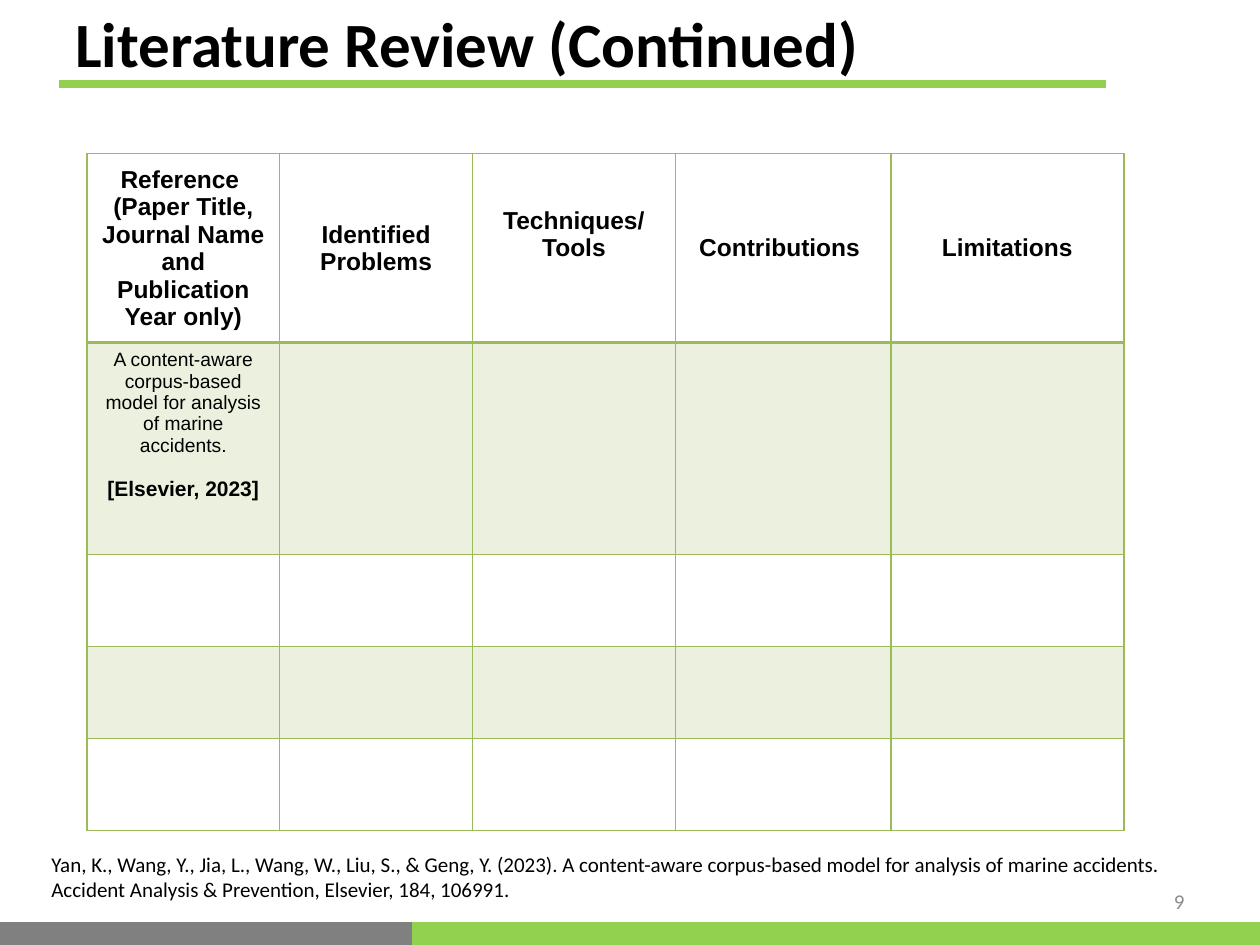
from lxml.etree import SubElement as Sub
from pptx import Presentation
from pptx.dml.color import RGBColor as RGB
from pptx.enum.shapes import MSO_CONNECTOR as Link
from pptx.enum.text import MSO_ANCHOR as Anchor, PP_ALIGN as Align
from pptx.oxml.ns import qn
from pptx.util import Inches, Pt

COLORS = {
    "lime": "92D050",
    "gray": "808080",
    "pale": "8C8C8C",
    "black": "000000",
    "edge": "9BBB59",
    "band": "EBF1DE",
}
HEADS = [
    ["Reference ", "(Paper Title, Journal Name and Publication Year only)"],
    ["Identified Problems"],
    ["Techniques/", "Tools"],
    ["Contributions "],
    ["Limitations"],
]
PAPER = "A content-aware corpus-based model for analysis of marine accidents."
CITE = (
    "Yan, K., Wang, Y., Jia, L., Wang, W., Liu, S., & Geng, Y. (2023). "
    "A content-aware corpus-based model for analysis of marine accidents. "
    "Accident Analysis & Prevention, Elsevier, 184, 106991."
)
WIDTHS = [1.53, 1.53, 1.61, 1.71, 1.85]
HEIGHTS = [1.41, 1.68, 0.73, 0.73, 0.73]


def write(frame, text, font="Calibri", size=12, color="black", bold=False,
          align=Align.LEFT, before=0):
    """Add one formatted paragraph, filling the first one if it is empty."""
    para = frame.paragraphs[0]
    if para.runs:
        para = frame.add_paragraph()
    para.alignment = align
    if before:
        para.space_before = Pt(before)
    run = para.add_run()
    run.text = text
    run.font.name = font
    run.font.size = Pt(size)
    run.font.bold = bold
    run.font.color.rgb = RGB.from_string(COLORS[color])


class Deck:
    """Hold the style and the current slide."""

    def __init__(self):
        """Open a blank slide."""
        self.show = Presentation()
        self.show.slide_width = Inches(10)
        self.show.slide_height = Inches(7.5)
        self.slide = self.show.slides.add_slide(self.show.slide_layouts[6])

    def bar(self, left, right, y, color, width):
        """Draw a thick level line with square ends."""
        line = self.slide.shapes.add_connector(
            Link.STRAIGHT, Inches(left), Inches(y), Inches(right), Inches(y))
        line.line.color.rgb = RGB.from_string(COLORS[color])
        line.line.width = Pt(width)
        line.line._get_or_add_ln().set("cap", "sq")
        Sub(line._element.spPr, qn("a:effectLst"))

    def label(self, box, text, anchor=Anchor.TOP, **style):
        """Place a wrapped text box."""
        frame = self.slide.shapes.add_textbox(*map(Inches, box)).text_frame
        frame.word_wrap = True
        frame.vertical_anchor = anchor
        write(frame, text, **style)

    def border(self, cell, top, bottom):
        """Edge a cell on all four sides."""
        props = cell._tc.get_or_add_tcPr()
        for side, width in zip("LRTB", (1, 1, top, bottom)):
            line = Sub(props, qn(f"a:ln{side}"), w=str(Pt(width)))
            fill = Sub(line, qn("a:solidFill"))
            Sub(fill, qn("a:srgbClr"), val=COLORS["edge"])

    def grid(self, left, top, widths, heights):
        """Add a banded table and return it."""
        table = self.slide.shapes.add_table(
            len(heights), len(widths), Inches(left), Inches(top),
            Inches(sum(widths)), Inches(sum(heights))).table
        table.first_row = table.horz_banding = False
        for col, width in zip(table.columns, widths):
            col.width = Inches(width)
        for i, height in enumerate(heights):
            table.rows[i].height = Inches(height)
            for cell in table.rows[i].cells:
                self.border(cell, 2 if i == 1 else 1, 2 if i == 0 else 1)
                if i % 2:
                    cell.fill.solid()
                    cell.fill.fore_color.rgb = RGB.from_string(COLORS["band"])
                else:
                    cell.fill.background()
        return table


def main():
    """Build and save the slide."""
    deck = Deck()
    deck.bar(0.08, 9.92, 7.42, "lime", 14.5)
    deck.bar(0.5, 8.75, 0.67, "lime", 4.5)
    deck.bar(0.08, 3.17, 7.42, "gray", 14.5)
    deck.label((7.17, 6.95, 2.33, 0.4), "9", Anchor.MIDDLE,
               color="pale", align=Align.RIGHT)
    deck.label((0.5, 0, 8.83, 0.67), "Literature Review (Continued)",
               Anchor.MIDDLE, size=36, bold=True)

    table = deck.grid(0.69, 1.22, WIDTHS, HEIGHTS)
    style = {"font": "Arial", "align": Align.CENTER}
    for cell, lines in zip(table.rows[0].cells, HEADS):
        cell.vertical_anchor = Anchor.MIDDLE
        for line in lines:
            write(cell.text_frame, line, size=14, bold=True, **style)
    table.cell(0, 2).margin_bottom = Inches(0.27)
    frame = table.cell(1, 0).text_frame
    write(frame, PAPER, size=11, **style)
    write(frame, "[Elsevier, 2023]", bold=True, before=12, **style)

    deck.label((0.31, 6.71, 9, 0.5), CITE, align=Align.JUSTIFY)
    deck.show.save("out.pptx")


if __name__ == "__main__":
    main()
